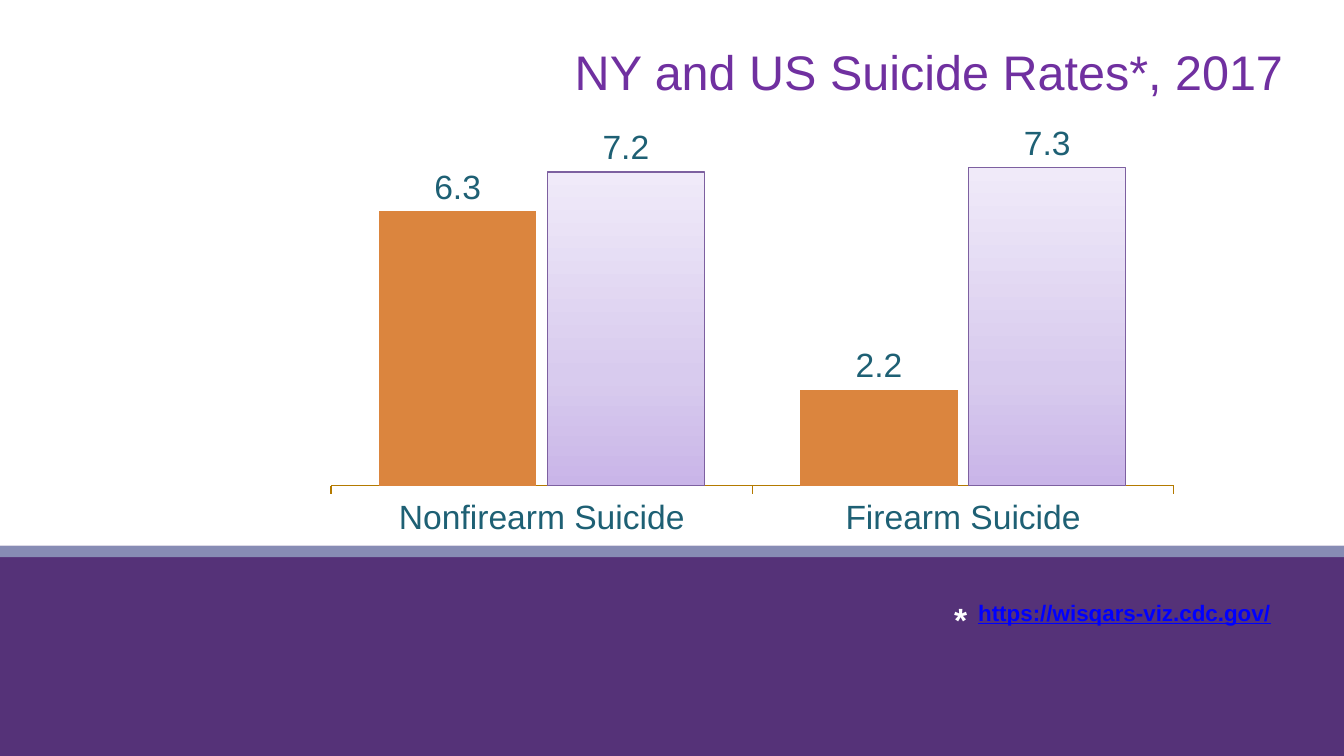
from dataclasses import dataclass

from lxml import etree
from pptx import Presentation
from pptx.chart.data import CategoryChartData
from pptx.dml.color import RGBColor
from pptx.enum.chart import XL_CHART_TYPE, XL_LABEL_POSITION, XL_TICK_MARK
from pptx.enum.shapes import MSO_SHAPE
from pptx.enum.text import MSO_ANCHOR, PP_ALIGN
from pptx.oxml import parse_xml
from pptx.oxml.ns import nsdecls, qn
from pptx.util import Emu, Pt

RECTANGLE = MSO_SHAPE.RECTANGLE
CLUSTERED_COLUMN = XL_CHART_TYPE.COLUMN_CLUSTERED
OUTSIDE_END = XL_LABEL_POSITION.OUTSIDE_END
TICK_OUTSIDE, TICK_NONE = XL_TICK_MARK.OUTSIDE, XL_TICK_MARK.NONE
LEFT, CENTER, RIGHT = PP_ALIGN.LEFT, PP_ALIGN.CENTER, PP_ALIGN.RIGHT
MIDDLE = MSO_ANCHOR.MIDDLE
EMU_PER_PX = 9525


@dataclass(frozen=True)
class Theme:
    """Colours, font and type sizes of the slide."""
    font: str = "Arial"
    title: str = "7030A0"
    band: str = "553278"
    stripe: str = "878CB4"
    chart_text: str = "1E6074"
    axis: str = "B47A00"
    new_york: str = "DB853E"
    national_line: str = "7D60A0"
    national_stops: tuple = ((0, "C9B5E8"), (35, "D8CBEE"), (100, "F0EAF9"))
    link: str = "0000FF"
    note: str = "FFFFFF"
    title_size: int = 26
    chart_size: int = 18
    note_size: int = 18
    link_size: int = 12


THEME = Theme()


def px(length):
    """Turn whole pixels into EMU."""
    return Emu(length * EMU_PER_PX)


def style_font(font, size, color, bold=False, underline=False):
    """Apply the theme font with a size and a colour."""
    font.name = THEME.font
    font.size = Pt(size)
    font.bold = bold
    font.underline = underline
    font.color.rgb = RGBColor.from_string(color)


def add_band(slide, top, height, color):
    """Add a full-width plain rectangle."""
    shape = slide.shapes.add_shape(RECTANGLE, px(0), px(top), px(960), px(height))
    shape.shadow.inherit = False
    shape.fill.solid()
    shape.fill.fore_color.rgb = RGBColor.from_string(color)
    shape.line.fill.background()


def set_title(slide, text, left, top, width, height):
    """Place and format the title placeholder."""
    title = slide.shapes.title
    title.left, title.top = px(left), px(top)
    title.width, title.height = px(width), px(height)
    text_frame = title.text_frame
    text_frame.text = text
    text_frame.vertical_anchor = MIDDLE
    paragraph = text_frame.paragraphs[0]
    paragraph.alignment = CENTER
    style_font(paragraph.runs[0].font, THEME.title_size, THEME.title)


def add_note(slide, text, box, size, color, alignment, underline=False):
    """Add a one-line bold text box."""
    text_frame = slide.shapes.add_textbox(*map(px, box)).text_frame
    text_frame.text = text
    text_frame.word_wrap = True
    paragraph = text_frame.paragraphs[0]
    paragraph.alignment = alignment
    style_font(paragraph.runs[0].font, size, color, True, underline)


def set_gradient(series, stops):
    """Fill a series with a gradient running from bottom to top."""
    fill = series.format.fill
    fill.gradient()
    fill.gradient_angle = 90
    stop_list = series.format.fill._xPr.find(qn("a:gradFill")).find(qn("a:gsLst"))
    for stop in list(stop_list):
        stop_list.remove(stop)
    for position, color in stops:
        stop = etree.SubElement(stop_list, qn("a:gs"), pos=str(position * 1000))
        etree.SubElement(stop, qn("a:srgbClr"), val=color)


def set_plot_layout(chart, x, y, w, h):
    """Fix the inner plot area as fractions of the chart."""
    plot_area = chart.plots[0]._element.getparent()
    for layout in plot_area.findall(qn("c:layout")):
        plot_area.remove(layout)
    places = "".join(f'<c:{name} val="{value}"/>' for name, value in
                     (("x", x), ("y", y), ("w", w), ("h", h)))
    plot_area.insert(0, parse_xml(
        f'<c:layout {nsdecls("c")}><c:manualLayout><c:layoutTarget val="inner"/>'
        f'<c:xMode val="edge"/><c:yMode val="edge"/>{places}'
        '</c:manualLayout></c:layout>'))


def style_axes(chart):
    """Show the category axis only, on a fixed value scale."""
    category_axis, value_axis = chart.category_axis, chart.value_axis
    category_axis.major_tick_mark = TICK_OUTSIDE
    category_axis.minor_tick_mark = TICK_NONE
    category_axis.has_major_gridlines = False
    category_axis.format.line.color.rgb = RGBColor.from_string(THEME.axis)
    category_axis.format.line.width = Pt(0.75)
    style_font(category_axis.tick_labels.font, THEME.chart_size, THEME.chart_text)
    value_axis.has_major_gridlines = False
    value_axis.minimum_scale, value_axis.maximum_scale = 0, 8
    value_axis.visible = False


def add_rates_chart(slide, box):
    """Add the clustered columns of suicide rates."""
    data = CategoryChartData(number_format="0.0")
    data.categories = ["Nonfirearm Suicide", "Firearm Suicide"]
    data.add_series("Series 1", (6.3, 2.2))
    data.add_series("Series 2", (7.2, 7.3))
    chart = slide.shapes.add_chart(CLUSTERED_COLUMN, *map(px, box), data).chart
    chart.has_legend = False
    chart.has_title = False
    style_font(chart.font, THEME.chart_size, THEME.chart_text)
    style_axes(chart)
    set_plot_layout(chart, 0.02, 0.03, 0.96, 0.83)

    plot = chart.plots[0]
    plot.vary_by_categories = False
    plot.gap_width, plot.overlap = 61, -7
    new_york, national = plot.series
    new_york.format.fill.solid()
    new_york.format.fill.fore_color.rgb = RGBColor.from_string(THEME.new_york)
    set_gradient(national, THEME.national_stops)
    national.format.line.color.rgb = RGBColor.from_string(THEME.national_line)
    national.format.line.width = Pt(0.75)
    for series in plot.series:
        labels = series.data_labels
        labels.show_value = True
        labels.number_format = "0.0"
        labels.number_format_is_linked = False
        labels.position = OUTSIDE_END
        style_font(labels.font, THEME.chart_size, THEME.chart_text)


def main():
    """Build and save the slide."""
    presentation = Presentation()
    presentation.slide_width, presentation.slide_height = px(960), px(540)
    slide = presentation.slides.add_slide(presentation.slide_layouts[5])
    add_band(slide, 390, 150, THEME.band)
    add_band(slide, 390, 8, THEME.stripe)
    set_title(slide, "NY and US Suicide Rates*, 2017", 396, 24, 536, 54)
    add_rates_chart(slide, (224, 89, 627, 300))
    add_note(slide, "https://wisqars-viz.cdc.gov/", (680, 423, 237, 29),
             THEME.link_size, THEME.link, RIGHT, underline=True)
    add_note(slide, "*", (672, 423, 29, 38), THEME.note_size, THEME.note, LEFT)
    presentation.save("out.pptx")


if __name__ == "__main__":
    main()
